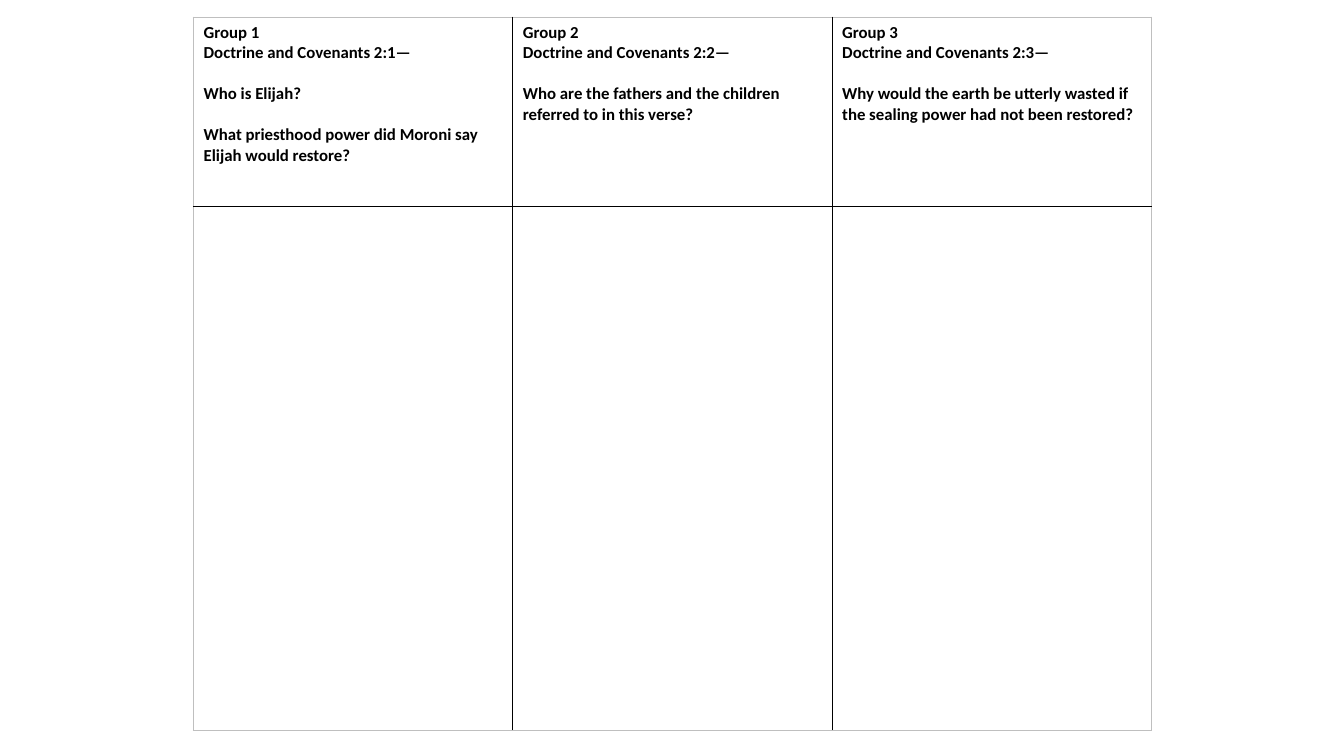
from dataclasses import dataclass

from lxml.etree import SubElement
from pptx import Presentation
from pptx.dml.color import RGBColor
from pptx.oxml.ns import qn
from pptx.util import Inches, Pt


@dataclass(frozen=True)
class Theme:
    font: str = "Calibri"
    size: float = 12
    gap: float = 14.65
    text: str = "000000"
    paper: str = "FFFFFF"
    grid: str = "000000"
    frame: str = "BFBFBF"
    line: float = 1


theme = Theme()


def write(p, text, size=theme.size, color=theme.text, bold=True, before=0):
    p.space_before = Pt(before)
    r = p.add_run()
    r.text = text
    r.font.name = theme.font
    r.font.size = Pt(size)
    r.font.bold = bold
    r.font.color.rgb = RGBColor.from_string(color)


def add_border(cell, side, color):
    ln = SubElement(cell._tc.get_or_add_tcPr(), qn(f"a:ln{side}"), w=str(Pt(theme.line)))
    fill = SubElement(ln, qn("a:solidFill"))
    SubElement(fill, qn("a:srgbClr"), val=color)


# Each group: verse reference, then its discussion questions
groups = [
    ("2:1", ["Who is Elijah?",
             "What priesthood power did Moroni say Elijah would restore?"]),
    ("2:2", ["Who are the fathers and the children referred to in this verse?"]),
    ("2:3", ["Why would the earth be utterly wasted if the sealing power had not been restored?"]),
]
row_heights = [1.88, 5.2]

prs = Presentation()
prs.slide_width, prs.slide_height = Inches(13.33), Inches(7.5)
slide = prs.slides.add_slide(prs.slide_layouts[6])

# Table grid
n_rows, n_cols = len(row_heights), len(groups)
table = slide.shapes.add_table(n_rows, n_cols, Inches(1.92), Inches(0.17),
                               Inches(9.5), Inches(sum(row_heights))).table
table.first_row = table.horz_banding = False
for row, height in zip(table.rows, row_heights):
    row.height = Inches(height)

# Cell borders: light outer frame, dark inner lines
for i in range(n_rows):
    for j in range(n_cols):
        cell = table.cell(i, j)
        outer = {"L": j == 0, "R": j == n_cols - 1, "T": i == 0, "B": i == n_rows - 1}
        for side, is_outer in outer.items():
            add_border(cell, side, theme.frame if is_outer else theme.grid)
        cell.fill.solid()
        cell.fill.fore_color.rgb = RGBColor.from_string(theme.paper)

# Group headings and questions; the second row stays empty for answers
for j, (verse, questions) in enumerate(groups):
    tf = table.cell(0, j).text_frame
    write(tf.paragraphs[0], f"Group {j + 1}")
    write(tf.add_paragraph(), f"Doctrine and Covenants {verse}—")
    for question in questions:
        write(tf.add_paragraph(), question, before=theme.gap)

prs.save("out.pptx")
